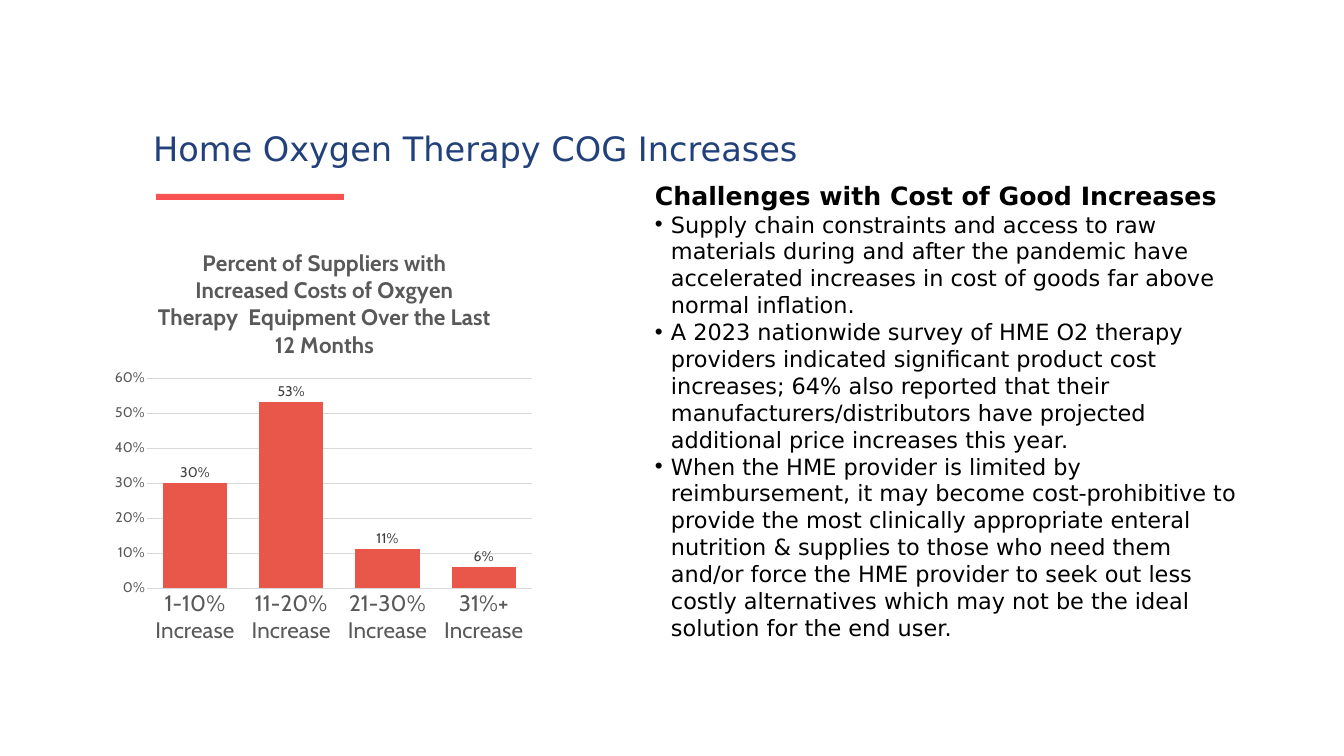
from lxml import etree
from pptx import Presentation
from pptx import util as u
from pptx.chart.data import CategoryChartData
from pptx.dml.color import RGBColor
from pptx.enum import chart as charts, shapes, text
from pptx.oxml import parse_xml
from pptx.oxml.ns import nsdecls, qn

TITLE = "Home Oxygen Therapy COG Increases"
HEADING = "Challenges with Cost of Good Increases"
CHALLENGES = [
    "Supply chain constraints and access to raw materials during and after the pandemic have "
    "accelerated increases in cost of goods far above normal inflation.",
    "A 2023 nationwide survey of HME O2 therapy providers indicated significant product cost "
    "increases; 64% also reported that their manufacturers/distributors have projected "
    "additional price increases this year.",
    "When the HME provider is limited by reimbursement, it may become cost-prohibitive to "
    "provide the most clinically appropriate enteral nutrition & supplies to those who need "
    "them and/or force the HME provider to seek out less costly alternatives which may not be "
    "the ideal solution for the end user.",
]
CHART_TITLE = ("Percent of Suppliers with Increased Costs of Oxgyen "
               "Therapy  Equipment Over the Last 12 Months")
COST_INCREASES = {
    "1-10% Increase": 0.30,
    "11-20% Increase": 0.53,
    "21-30% Increase": 0.11,
    "31%+ Increase": 0.06,
}

SLIDE_SIZE = (1344, 756)
RULE_BOX = (156, 194, 188, 6)
TITLE_BOX = (148, 75, 1090, 114)
BODY_BOX = (650, 178, 596, 353)
CHART_BOX = (106, 228, 435, 425)
PLOT_BOX = (147, 378, 385, 210)
CHART_TITLE_AT = (154, 243)
BULLET_INDENT = 16

TEXT_FONT, CHART_FONT = "DejaVu Sans", "Cabin"
NAVY, RED, BAR_RED = "22417B", "F75152", "E9564A"
BLACK, GRAY, DARK_GRAY, GRID_GRAY = "000000", "595959", "404040", "D9D9D9"


def px(length):
    return u.Emu(round(length * 914400 / 50.4))


def box(lengths):
    return [px(length) for length in lengths]


def color(value):
    return RGBColor.from_string(value)


def style(font, name, size, value, bold=False):
    font.name, font.size, font.bold = name, u.Pt(size), bold
    font.color.rgb = color(value)


def add_run(paragraph, words, size, value, bold=False):
    run = paragraph.add_run()
    run.text = words
    style(run.font, TEXT_FONT, size, value, bold)


def add_bullet(paragraph):
    properties = paragraph._p.get_or_add_pPr()
    properties.set("marL", str(px(BULLET_INDENT)))
    properties.set("indent", str(-px(BULLET_INDENT)))
    etree.SubElement(properties, qn("a:buFont")).set("typeface", "Arial")
    etree.SubElement(properties, qn("a:buChar")).set("char", "•")


def chart_layout(position, target=""):
    """Manual layout in fractions of the chart, from a position in slide px."""
    left, top, width, height = CHART_BOX
    values = {"x": (position[0] - left) / width, "y": (position[1] - top) / height}
    if len(position) == 4:
        values.update(w=position[2] / width, h=position[3] / height)
    parts = f'<c:layoutTarget val="{target}"/>' if target else ""
    parts += '<c:xMode val="edge"/><c:yMode val="edge"/>'
    parts += "".join(f'<c:{key} val="{value:.3f}"/>' for key, value in values.items())
    return parse_xml(f'<c:layout {nsdecls("c")}><c:manualLayout>{parts}'
                     "</c:manualLayout></c:layout>")


def add_title(slide):
    title = slide.shapes.title
    title.left, title.top, title.width, title.height = box(TITLE_BOX)
    frame = title.text_frame
    frame.word_wrap = True
    frame.auto_size = text.MSO_AUTO_SIZE.NONE
    frame.vertical_anchor = text.MSO_ANCHOR.TOP
    paragraph = frame.paragraphs[0]
    paragraph.alignment = text.PP_ALIGN.LEFT
    paragraph.line_spacing = u.Pt(130)
    add_run(paragraph, TITLE, 48, NAVY)


def add_rule(slide):
    rule = slide.shapes.add_shape(shapes.MSO_SHAPE.RECTANGLE, *box(RULE_BOX))
    rule.shadow.inherit = False
    rule.fill.solid()
    rule.fill.fore_color.rgb = color(RED)
    rule.line.fill.background()


def add_challenges(slide):
    frame = slide.shapes.add_textbox(*box(BODY_BOX)).text_frame
    frame.word_wrap = True
    add_run(frame.paragraphs[0], HEADING, 36, BLACK, bold=True)
    for challenge in CHALLENGES:
        paragraph = frame.add_paragraph()
        add_bullet(paragraph)
        add_run(paragraph, challenge, 32, BLACK)


def add_cost_chart(slide):
    data = CategoryChartData(number_format="0%")
    data.categories = list(COST_INCREASES)
    data.add_series("Series 1", list(COST_INCREASES.values()))
    chart = slide.shapes.add_chart(
        charts.XL_CHART_TYPE.COLUMN_CLUSTERED, *box(CHART_BOX), data).chart
    style(chart.font, CHART_FONT, 10, BLACK)
    chart.has_legend = False

    chart.has_title = True
    run = chart.chart_title.text_frame.paragraphs[0].add_run()
    run.text = CHART_TITLE
    style(run.font, CHART_FONT, 32, GRAY, bold=True)
    title = chart.chart_title._element
    for old in title.findall(qn("c:layout")):
        title.remove(old)
    title.find(qn("c:tx")).addnext(chart_layout(CHART_TITLE_AT))

    plot_area = chart._chartSpace.chart.plotArea
    for old in plot_area.findall(qn("c:layout")):
        plot_area.remove(old)
    plot_area.insert(0, chart_layout(PLOT_BOX, "inner"))

    for axis, size in ((chart.category_axis, 32), (chart.value_axis, 20)):
        style(axis.tick_labels.font, CHART_FONT, size, GRAY)
        axis.major_tick_mark = axis.minor_tick_mark = charts.XL_TICK_MARK.NONE
    value_axis = chart.value_axis
    value_axis.minimum_scale, value_axis.maximum_scale, value_axis.major_unit = 0, 0.6, 0.1
    value_axis.tick_labels.number_format = "0%"
    value_axis.tick_labels.number_format_is_linked = False
    value_axis.format.line.fill.background()
    for line in (chart.category_axis.format.line, value_axis.major_gridlines.format.line):
        line.color.rgb = color(GRID_GRAY)
        line.width = u.Pt(0.75)

    plot = chart.plots[0]
    plot.vary_by_categories = False
    plot.gap_width, plot.overlap = 50, -27
    fill = plot.series[0].format.fill
    fill.solid()
    fill.fore_color.rgb = color(BAR_RED)
    plot.has_data_labels = True
    labels = plot.data_labels
    labels.show_value = True
    labels.number_format, labels.number_format_is_linked = "0%", False
    labels.position = charts.XL_LABEL_POSITION.OUTSIDE_END
    style(labels.font, CHART_FONT, 20, DARK_GRAY)


def main():
    presentation = Presentation()
    presentation.slide_width, presentation.slide_height = box(SLIDE_SIZE)
    slide = presentation.slides.add_slide(presentation.slide_layouts[5])
    add_rule(slide)
    add_title(slide)
    add_challenges(slide)
    add_cost_chart(slide)
    presentation.save("out.pptx")


if __name__ == "__main__":
    main()
